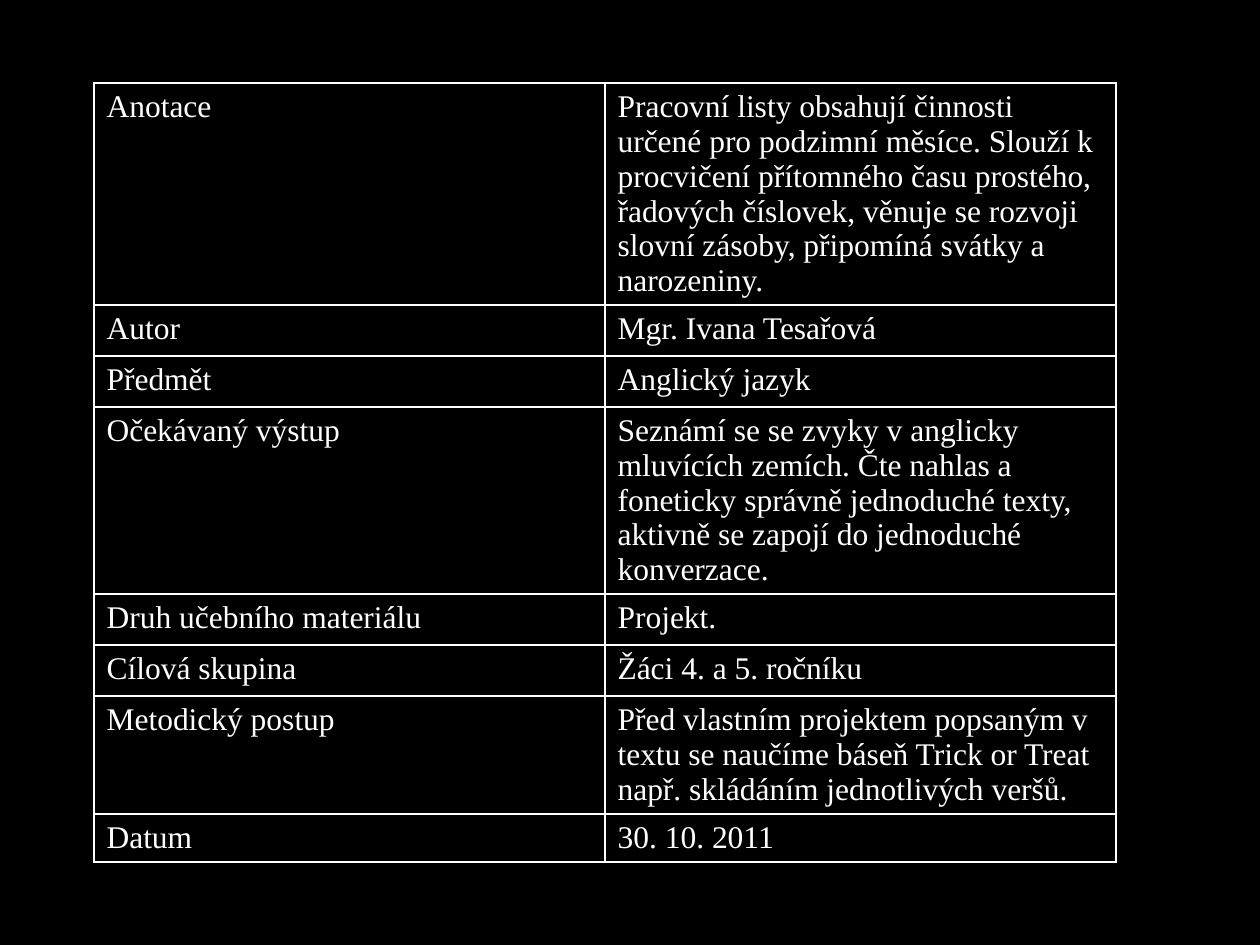
"""Build a slide with a lesson information table in white on black."""
from lxml import etree
from pptx import Presentation
from pptx.dml.color import RGBColor
from pptx.enum.text import MSO_ANCHOR
from pptx.oxml.ns import qn
from pptx.util import Emu, Pt

PX_PER_INCH = 126
TOP = MSO_ANCHOR.TOP
COLORS = {"background": "000000", "text": "FFFFFF", "border": "FFFFFF"}
FONT = {"name": "Times New Roman", "size": Pt(18), "bold": False}
BORDER_WIDTH = Pt(1)
BORDER_SIDES = ("a:lnL", "a:lnR", "a:lnT", "a:lnB")
TABLE_LEFT, TABLE_TOP, COLUMN_WIDTH = 94, 83, 511
TABLE_FLAGS = {"first_row": False, "horz_banding": False}
LESSON_ROWS = [
    (221, "Anotace",
     "Pracovní listy obsahují činnosti určené pro podzimní měsíce. Slouží k "
     "procvičení přítomného času prostého, řadových číslovek, věnuje se rozvoji "
     "slovní zásoby, připomíná svátky a narozeniny."),
    (51, "Autor", "Mgr. Ivana Tesařová"),
    (51, "Předmět", "Anglický jazyk"),
    (187, "Očekávaný výstup",
     "Seznámí se se zvyky v anglicky mluvících zemích. Čte nahlas a\n"
     "foneticky správně jednoduché texty, aktivně se zapojí do jednoduché "
     "konverzace."),
    (51, "Druh učebního materiálu", "Projekt."),
    (51, "Cílová skupina", "Žáci 4. a 5. ročníku"),
    (118, "Metodický postup",
     "Před vlastním projektem popsaným v textu se naučíme báseň Trick or Treat "
     "např. skládáním jednotlivých veršů."),
    (48, "Datum", "30. 10. 2011"),
]


def px(length):
    """Turn a length in px into EMU."""
    return Emu(round(length * 914400 / PX_PER_INCH))


def paint(fill, color_name):
    """Give a fill one solid colour."""
    fill.solid()
    fill.fore_color.rgb = RGBColor.from_string(COLORS[color_name])


def add_borders(cell):
    """Draw a solid line on all four sides of a cell."""
    properties = cell._tc.get_or_add_tcPr()
    for position, side in enumerate(BORDER_SIDES):
        line = etree.Element(qn(side), w=str(BORDER_WIDTH))
        solid = etree.SubElement(line, qn("a:solidFill"))
        etree.SubElement(solid, qn("a:srgbClr"), val=COLORS["border"])
        properties.insert(position, line)


def write_cell(cell, text):
    """Fill a cell with formatted text and outline it."""
    cell.text = text
    cell.vertical_anchor = TOP
    paint(cell.fill, "background")
    for paragraph in cell.text_frame.paragraphs:
        for run in paragraph.runs:
            for attribute, value in FONT.items():
                setattr(run.font, attribute, value)
            paint(run.font.fill, "text")
    add_borders(cell)


def add_lesson_table(slide):
    """Add the two-column table of labels and details."""
    total_height = sum(height for height, *_ in LESSON_ROWS)
    table = slide.shapes.add_table(
        len(LESSON_ROWS), 2, px(TABLE_LEFT), px(TABLE_TOP),
        px(2 * COLUMN_WIDTH), px(total_height)).table
    for attribute, value in TABLE_FLAGS.items():
        setattr(table, attribute, value)
    for row, (height, *texts) in zip(table.rows, LESSON_ROWS):
        row.height = px(height)
        for cell, text in zip(row.cells, texts):
            write_cell(cell, text)


def main():
    """Build and save the slide."""
    presentation = Presentation()
    presentation.slide_width, presentation.slide_height = px(1260), px(945)
    slide = presentation.slides.add_slide(presentation.slide_layouts[6])
    paint(slide.background.fill, "background")
    add_lesson_table(slide)
    presentation.save("out.pptx")


if __name__ == "__main__":
    main()
